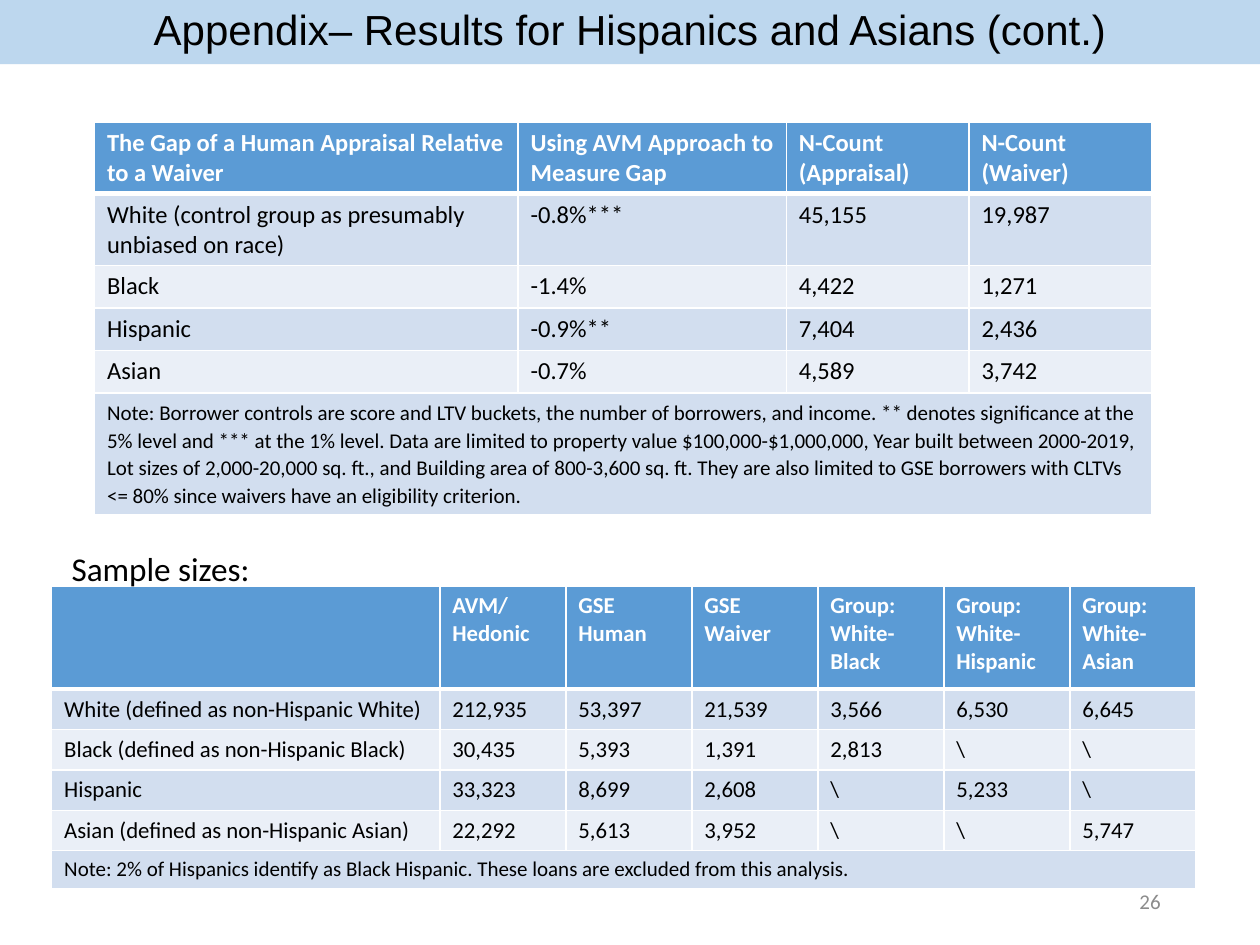
from dataclasses import dataclass
from typing import Any

import lxml.etree
import pptx
import pptx.dml.color
import pptx.enum.shapes
import pptx.enum.text
import pptx.oxml.ns
import pptx.util

Pt = pptx.util.Pt
ALIGN = pptx.enum.text.PP_ALIGN
ANCHOR = pptx.enum.text.MSO_ANCHOR

WHITE, BLACK, GREY = "FFFFFF", "000000", "8C8C8C"
HEADER_FILL, TITLE_FILL = "5B9BD5", "BDD7EE"
BAND_FILLS = ("D2DEEF", "EAEFF7")
THIN_BORDER, THICK_BORDER = 1, 3


@dataclass(frozen=True)
class TextStyle:
    size: float
    color: str = BLACK
    font: str = "Calibri"
    bold: bool = False
    align: Any = ALIGN.LEFT
    spacing: float = 1.0
    before: float = 0


@dataclass(frozen=True)
class Box:
    left: float
    top: float
    width: float
    height: float

    def lengths(self) -> list:
        return [Pt(value) for value in (self.left, self.top, self.width, self.height)]


@dataclass(frozen=True)
class TableSpec:
    box: Box
    columns: list
    row_heights: list
    rows: list
    note: str
    size: float
    note_spacing: float = 1.0


def rgb(color: str) -> pptx.dml.color.RGBColor:
    return pptx.dml.color.RGBColor.from_string(color)


def set_attributes(target: Any, values: dict) -> None:
    for name, value in values.items():
        setattr(target, name, value)


def write_text(frame: Any, text: str, style: TextStyle) -> None:
    frame.text = text
    for paragraph in frame.paragraphs:
        set_attributes(paragraph, {
            "alignment": style.align,
            "line_spacing": style.spacing,
            "space_before": Pt(style.before),
        })
        for run in paragraph.runs:
            set_attributes(run.font, {
                "name": style.font, "size": Pt(style.size), "bold": style.bold,
            })
            run.font.color.rgb = rgb(style.color)


def add_text(slide: Any, box: Box, text: str, style: TextStyle,
             anchor: Any = ANCHOR.TOP, fill: str = "") -> None:
    if fill:
        shape = slide.shapes.add_shape(
            pptx.enum.shapes.MSO_SHAPE.RECTANGLE, *box.lengths())
        shape.shadow.inherit = False
        shape.fill.solid()
        shape.fill.fore_color.rgb = rgb(fill)
        shape.line.fill.background()
    else:
        shape = slide.shapes.add_textbox(*box.lengths())
    set_attributes(shape.text_frame, {"word_wrap": True, "vertical_anchor": anchor})
    write_text(shape.text_frame, text, style)


def set_borders(cell: Any, row: int) -> None:
    # The edge between the header and the first body row is thick
    widths = {"L": THIN_BORDER, "R": THIN_BORDER,
              "T": THICK_BORDER if row == 1 else THIN_BORDER,
              "B": THICK_BORDER if row == 0 else THIN_BORDER}
    qn = pptx.oxml.ns.qn
    properties = cell._tc.get_or_add_tcPr()
    for side, width in widths.items():
        line = lxml.etree.SubElement(properties, qn(f"a:ln{side}"), w=str(Pt(width)))
        fill = lxml.etree.SubElement(line, qn("a:solidFill"))
        lxml.etree.SubElement(fill, qn("a:srgbClr"), val=WHITE)


def add_data_table(slide: Any, spec: TableSpec) -> None:
    column_count = len(spec.columns)
    note_row = len(spec.rows)
    table = slide.shapes.add_table(
        note_row + 1, column_count, *spec.box.lengths()).table
    for column, width in zip(table.columns, spec.columns):
        column.width = Pt(width)
    for row, height in zip(table.rows, spec.row_heights):
        row.height = Pt(height)

    header_style = TextStyle(spec.size, WHITE, bold=True)
    body_style = TextStyle(spec.size)
    note_style = TextStyle(12, spacing=spec.note_spacing)
    texts = spec.rows + [[spec.note] + [""] * (column_count - 1)]
    for r, row_texts in enumerate(texts):
        style = {0: header_style, note_row: note_style}.get(r, body_style)
        for c, text in enumerate(row_texts):
            cell = table.cell(r, c)
            set_borders(cell, r)
            cell.fill.solid()
            cell.fill.fore_color.rgb = rgb(BAND_FILLS[(r - 1) % 2] if r else HEADER_FILL)
            write_text(cell.text_frame, text, style)
    table.cell(note_row, 0).merge(table.cell(note_row, column_count - 1))


GAP_TABLE = TableSpec(
    box=Box(54, 69.84, 604.1, 224.1),
    columns=[242, 153.3, 104.4, 104.4],
    row_heights=[40.9, 40.9] + [24.3] * 3 + [69.4],
    rows=[
        ["The Gap of a Human Appraisal Relative to a Waiver",
         "Using AVM Approach to Measure Gap", "N-Count (Appraisal)", "N-Count (Waiver)"],
        ["White (control group as presumably unbiased on race)",
         "-0.8%***", "45,155", "19,987"],
        ["Black", "-1.4%", "4,422", "1,271"],
        ["Hispanic", "-0.9%**", "7,404", "2,436"],
        ["Asian", "-0.7%", "4,589", "3,742"],
    ],
    note="Note: Borrower controls are score and LTV buckets, the number of borrowers, "
         "and income. ** denotes significance at the 5% level and *** at the 1% level. "
         "Data are limited to property value $100,000-$1,000,000, Year built between "
         "2000-2019, Lot sizes of 2,000-20,000 sq. ft., and Building area of 800-3,600 "
         "sq. ft. They are also limited to GSE borrowers with CLTVs <= 80% since waivers "
         "have an eligibility criterion.",
    size=14,
    note_spacing=1.07,
)

SAMPLE_TABLE = TableSpec(
    box=Box(29.5, 334.8, 653.8, 173),
    columns=[221.8] + [72] * 6,
    row_heights=[59] + [23.1] * 4 + [21.6],
    rows=[
        ["", "AVM/ Hedonic", "GSE Human", "GSE Waiver", "Group: White-Black",
         "Group:\nWhite-\nHispanic", "Group: White-\nAsian"],
        ["White (defined as non-Hispanic White)",
         "212,935", "53,397", "21,539", "3,566", "6,530", "6,645"],
        ["Black (defined as non-Hispanic Black)",
         "30,435", "5,393", "1,391", "2,813", "\\", "\\"],
        ["Hispanic", "33,323", "8,699", "2,608", "\\", "5,233", "\\"],
        ["Asian (defined as non-Hispanic Asian)",
         "22,292", "5,613", "3,952", "\\", "\\", "5,747"],
    ],
    note="Note: 2% of Hispanics identify as Black Hispanic. "
         "These loans are excluded from this analysis.",
    size=13,
)


def main() -> None:
    presentation = pptx.Presentation()
    set_attributes(presentation, {"slide_width": Pt(720), "slide_height": Pt(540)})
    slide = presentation.slides.add_slide(presentation.slide_layouts[6])

    # Page number
    add_text(slide, Box(508.3, 500.4, 162, 28.8), "26",
             TextStyle(12, GREY, align=ALIGN.RIGHT), ANCHOR.MIDDLE)

    # Tables
    for spec in (GAP_TABLE, SAMPLE_TABLE):
        add_data_table(slide, spec)

    # Title band and heading of the second table
    add_text(slide, Box(0, 0, 720, 36.7),
             "Appendix– Results for Hispanics and Asians (cont.)",
             TextStyle(24, font="Arial", align=ALIGN.CENTER, spacing=0.9),
             ANCHOR.MIDDLE, TITLE_FILL)
    add_text(slide, Box(33.8, 309.6, 598.3, 30.2), "Sample sizes:",
             TextStyle(19, before=7))

    presentation.save("out.pptx")


if __name__ == "__main__":
    main()
